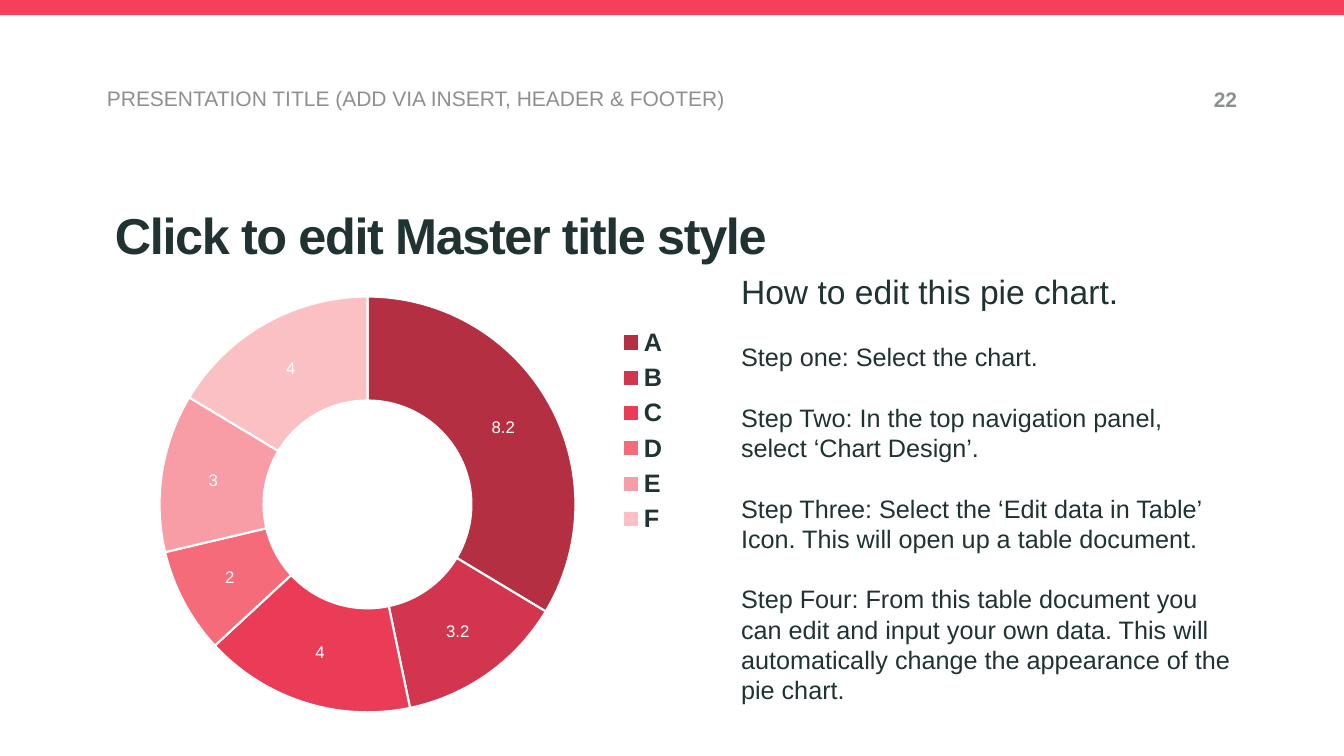
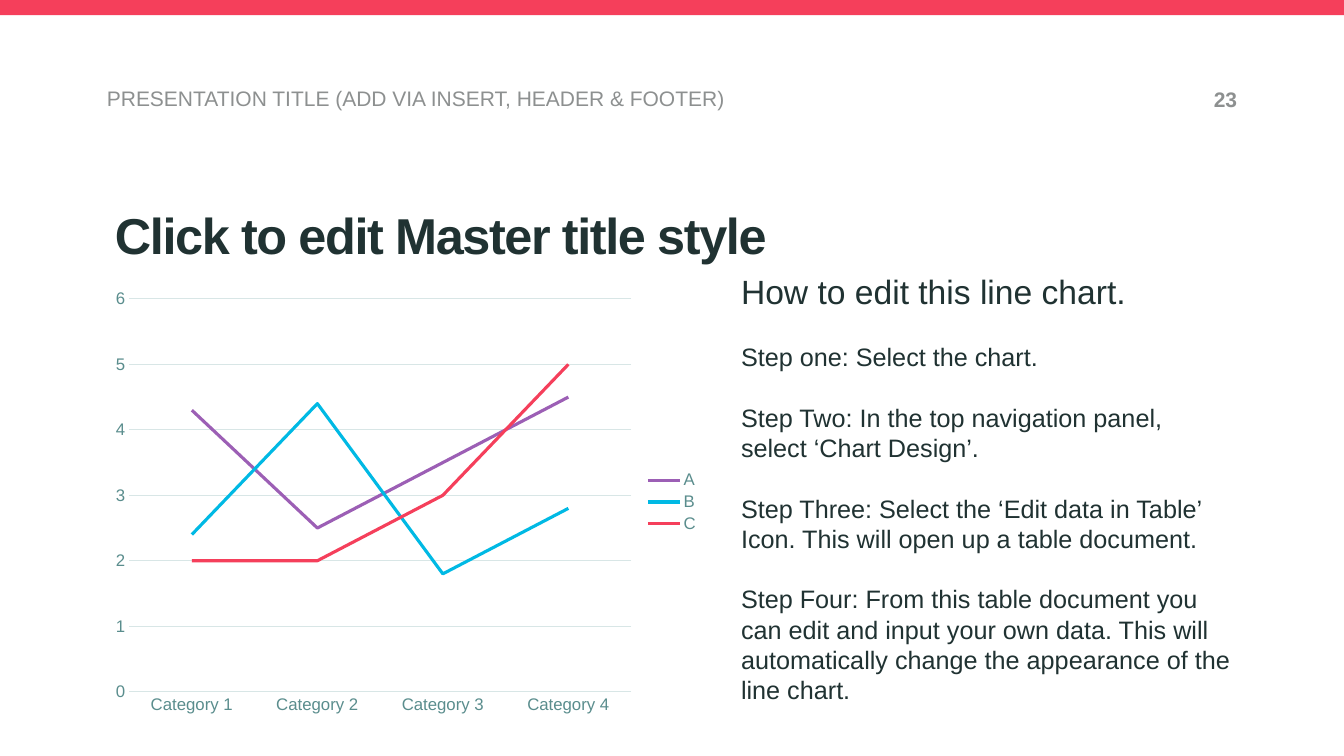
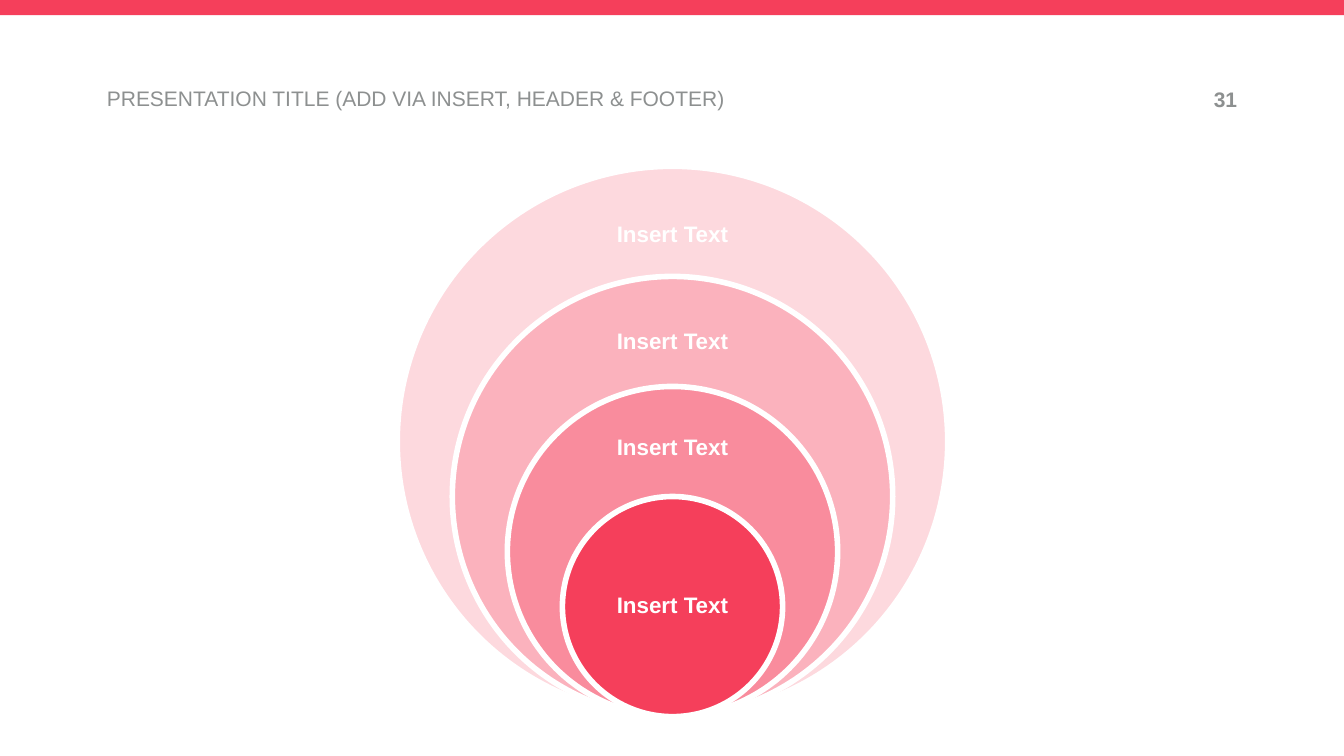
"""Build three template slides: a doughnut chart, a line chart and nested circles."""
from dataclasses import dataclass

from lxml import etree
from pptx import Presentation
from pptx.chart.data import CategoryChartData
from pptx.dml.color import RGBColor
from pptx.enum.chart import XL_CHART_TYPE, XL_LEGEND_POSITION, XL_TICK_MARK
from pptx.enum.shapes import MSO_SHAPE
from pptx.enum.text import MSO_ANCHOR, MSO_AUTO_SIZE, PP_ALIGN
from pptx.oxml.ns import qn
from pptx.util import Inches, Pt

LEFT, CENTER, RIGHT = PP_ALIGN.LEFT, PP_ALIGN.CENTER, PP_ALIGN.RIGHT
TOP, MIDDLE = MSO_ANCHOR.TOP, MSO_ANCHOR.MIDDLE
NO_AUTOFIT = MSO_AUTO_SIZE.NONE
RECTANGLE, OVAL = MSO_SHAPE.RECTANGLE, MSO_SHAPE.OVAL
DOUGHNUT, LINE = XL_CHART_TYPE.DOUGHNUT, XL_CHART_TYPE.LINE
LEGEND_RIGHT = XL_LEGEND_POSITION.RIGHT
NO_TICK = XL_TICK_MARK.NONE
TITLE_ONLY, BLANK = 5, 6


@dataclass(frozen=True)
class Theme:
    font: str = "Arial"
    accent: RGBColor = RGBColor.from_string("F53F5B")
    dark: RGBColor = RGBColor.from_string("203232")
    muted: RGBColor = RGBColor.from_string("8D9090")
    axis: RGBColor = RGBColor.from_string("5A8D8D")
    grid: RGBColor = RGBColor.from_string("D8E6E6")
    white: RGBColor = RGBColor.from_string("FFFFFF")
    slices: tuple = ("B52F43", "D2364E", "EA3C57", "F66B7A", "F89DA5", "FAC0C4")
    lines: tuple = ("9C5FB5", "00B9E4", "F53F5B")
    circles: tuple = ("FDD9DE", "FBB2BD", "F98C9D", "F53F5B")
    title: Pt = Pt(36)
    heading: Pt = Pt(24)
    body: Pt = Pt(18)
    label: Pt = Pt(16)
    header: Pt = Pt(15)
    chart: Pt = Pt(12)
    leading: Pt = Pt(21.6)


theme = Theme()


def add_text(page, place, text, size, color, bold=False, align=LEFT, anchor=TOP):
    box = page.shapes.add_textbox(*(Inches(length) for length in place))
    frame = box.text_frame
    frame.word_wrap = True
    frame.vertical_anchor = anchor
    frame.margin_left = frame.margin_top = frame.margin_right = frame.margin_bottom = 0
    frame.text = text
    for para in frame.paragraphs:
        para.alignment = align
        for span in para.runs:
            span.font.name, span.font.size, span.font.bold = theme.font, size, bold
            span.font.color.rgb = color
    return frame


def make_layout(x, y, width, height, inner=False):
    layout = etree.Element(qn("c:layout"))
    manual = etree.SubElement(layout, qn("c:manualLayout"))
    settings = [("layoutTarget", "inner")] if inner else []
    settings += [("xMode", "edge"), ("yMode", "edge"), ("x", x), ("y", y), ("w", width), ("h", height)]
    for tag, value in settings:
        etree.SubElement(manual, qn(f"c:{tag}")).set("val", str(value))
    return layout


deck = Presentation()
deck.slide_width, deck.slide_height = Inches(13.33), Inches(7.5)

pages = []
for number, layout_index in ((22, TITLE_ONLY), (23, TITLE_ONLY), (31, BLANK)):
    page = deck.slides.add_slide(deck.slide_layouts[layout_index])
    pages.append(page)
    band = page.shapes.add_shape(RECTANGLE, 0, 0, deck.slide_width, Inches(0.15))
    band.shadow.inherit = False
    band.fill.solid()
    band.fill.fore_color.rgb = theme.accent
    band.line.fill.background()
    add_text(page, (1.06, 0.85, 7.85, 0.25), "PRESENTATION TITLE (ADD VIA INSERT, HEADER & FOOTER)",
             theme.header, theme.muted)
    add_text(page, (10.74, 0.86, 1.53, 0.25), str(number), theme.header, theme.muted, True, RIGHT)

doughnut_page, line_page, circle_page = pages

for page, kind in ((doughnut_page, "pie"), (line_page, "line")):
    title = page.shapes.title
    title.left, title.top, title.width, title.height = Inches(1.04), Inches(2.07), Inches(11.24), Inches(0.4)
    frame = title.text_frame
    frame.text = "Click to edit Master title style"
    frame.auto_size, frame.vertical_anchor = NO_AUTOFIT, TOP
    para = frame.paragraphs[0]
    para.alignment, para.line_spacing = LEFT, theme.title
    font = para.runs[0].font
    font.name, font.size, font.bold = theme.font, theme.title, True
    font.color.rgb = theme.dark
    para.runs[0].font._element.set("spc", "-100")

    steps = "\n".join((
        f"How to edit this {kind} chart.",
        "Step one: Select the chart.",
        "Step Two: In the top navigation panel,",
        "select ‘Chart Design’.",
        "Step Three: Select the ‘Edit data in Table’ Icon. This will open up a table document.",
        "Step Four: From this table document you can edit and input your own data. "
        f"This will automatically change the appearance of the {kind} chart.",
    ))
    frame = add_text(page, (7.35, 2.79, 4.93, 4.43), steps, theme.body, theme.dark)
    frame.paragraphs[0].runs[0].font.size = theme.heading
    for para in frame.paragraphs:
        para.line_spacing = theme.leading
        if para.text.startswith("Step"):
            para.space_before = theme.leading

doughnut_data = CategoryChartData()
doughnut_data.categories = list("ABCDEF")
doughnut_data.add_series("Series 1", (8.2, 3.2, 4, 2, 3, 4))

line_data = CategoryChartData()
line_data.categories = [f"Category {index}" for index in range(1, 5)]
line_data.add_series("A", (4.3, 2.5, 3.5, 4.5))
line_data.add_series("B", (2.4, 4.4, 1.8, 2.8))
line_data.add_series("C", (2, 2, 3, 5))

charts = []
for page, kind, place, data, plot_place, legend_style in (
    (doughnut_page, DOUGHNUT, (1.06, 2.79, 5.81, 4.43), doughnut_data,
     (0.09, 0.03, 0.71, 0.94), (theme.body, theme.dark, True)),
    (line_page, LINE, (1.04, 2.79, 6, 4.38), line_data,
     (0.04, 0.04, 0.83, 0.89), (theme.chart, theme.axis, False)),
):
    chart = page.shapes.add_chart(kind, *(Inches(length) for length in place), data).chart
    charts.append(chart)
    chart.has_title = False
    chart.font.name, chart.font.size = theme.font, theme.chart
    chart.font.color.rgb = theme.dark
    chart.has_legend = True
    chart.legend.position = LEGEND_RIGHT
    chart.legend.include_in_layout = False
    font = chart.legend.font
    font.name = theme.font
    font.size, font.color.rgb, font.bold = legend_style
    plot_area = chart.element.xpath(".//c:plotArea")[0]
    for old_layout in plot_area.findall(qn("c:layout")):
        plot_area.remove(old_layout)
    plot_area.insert(0, make_layout(*plot_place, inner=True))

doughnut, line_chart = charts

legend_position = doughnut.element.xpath(".//c:legendPos")[0]
legend = legend_position.getparent()
for old_layout in legend.findall(qn("c:layout")):
    legend.remove(old_layout)
legend_position.addnext(make_layout(0.86, 0.09, 0.11, 0.49))

plot = doughnut.plots[0]
for index, color in enumerate(theme.slices):
    piece = plot.series[0].points[index].format
    piece.fill.solid()
    piece.fill.fore_color.rgb = RGBColor.from_string(color)
    piece.line.color.rgb = theme.white
    piece.line.width = Pt(1.5)
plot.has_data_labels = True
labels = plot.data_labels
labels.show_value, labels.show_percentage = True, False
labels.font.name, labels.font.size = theme.font, theme.chart
labels.font.color.rgb = theme.white

for series, color in zip(line_chart.plots[0].series, theme.lines):
    series.smooth = False
    series.format.line.color.rgb = RGBColor.from_string(color)
    series.format.line.width = Pt(2.25)

value_axis, category_axis = line_chart.value_axis, line_chart.category_axis
for axis in (value_axis, category_axis):
    axis.major_tick_mark = axis.minor_tick_mark = NO_TICK
    axis.tick_labels.font.name, axis.tick_labels.font.size = theme.font, theme.chart
    axis.tick_labels.font.color.rgb = theme.axis
value_axis.minimum_scale, value_axis.maximum_scale, value_axis.major_unit = 0, 6, 1
value_axis.format.line.fill.background()
value_axis.has_major_gridlines = True
for line in (value_axis.major_gridlines.format.line, category_axis.format.line):
    line.color.rgb = theme.grid
    line.width = Pt(0.75)

center, bottom, largest = 6.67, 7.11, 5.46
label_width, label_height = 1.54, 0.8
for index, (color, label_middle) in enumerate(zip(theme.circles, (2.33, 3.4, 4.45, 6.01))):
    size = largest * (1 - index / 5)
    circle = circle_page.shapes.add_shape(
        OVAL, Inches(center - size / 2), Inches(bottom - size), Inches(size), Inches(size))
    circle.shadow.inherit = False
    circle.fill.solid()
    circle.fill.fore_color.rgb = RGBColor.from_string(color)
    circle.line.color.rgb = theme.white
    circle.line.width = Pt(4)
    place = (center - label_width / 2, label_middle - label_height / 2, label_width, label_height)
    frame = add_text(circle_page, place, "Insert Text", theme.label, theme.white, True, CENTER, MIDDLE)
    frame.paragraphs[0].line_spacing = 0.9

deck.save("out.pptx")
